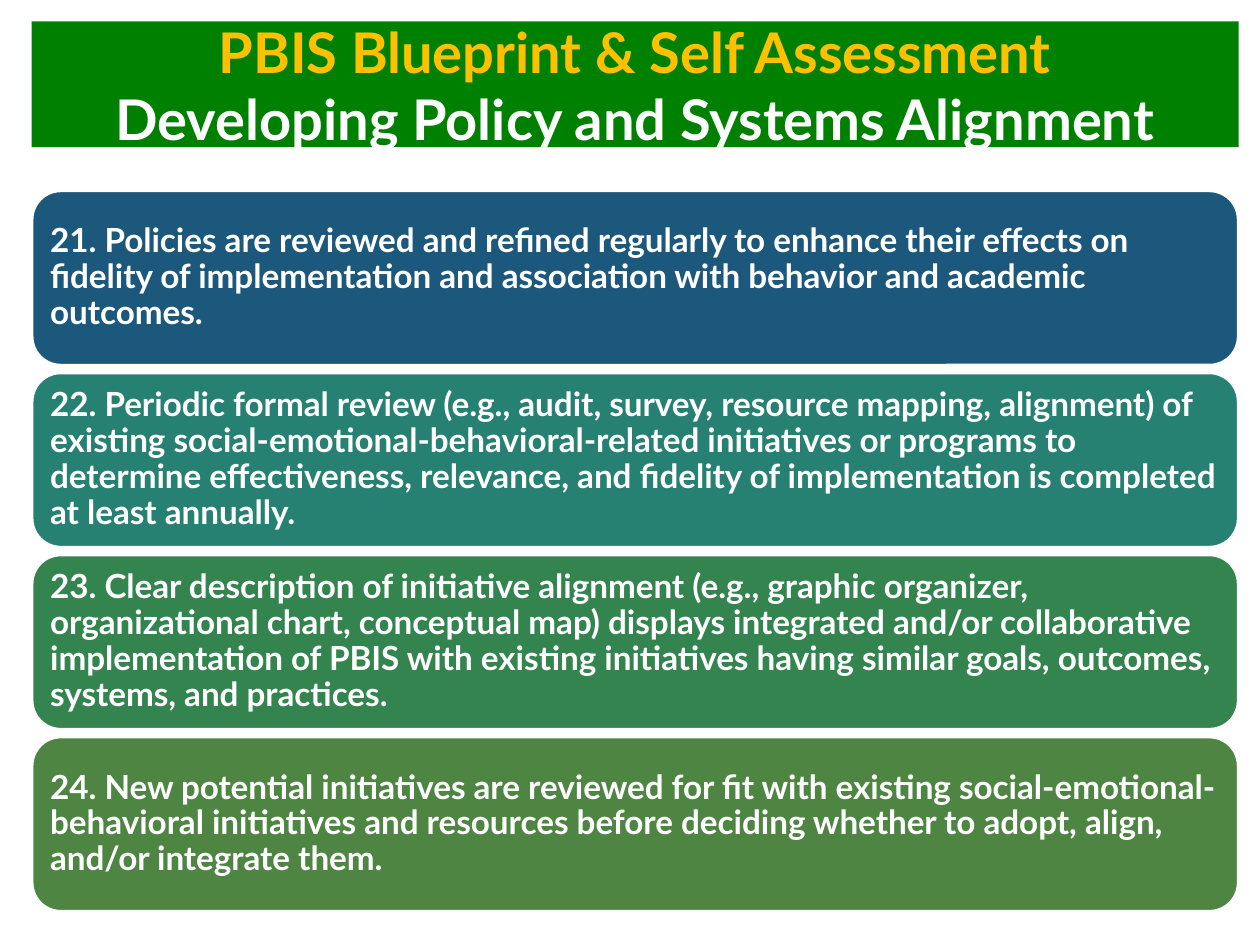
from dataclasses import dataclass

from pptx import Presentation
from pptx import util as u
from pptx.dml.color import RGBColor
from pptx.enum import shapes, text

COLORS = {
    "white": "FFFFFF",
    "gold": "FFC000",
    "banner": "008000",
    "blue": "1B587C",
    "teal": "268173",
    "green": "33844E",
    "olive": "4E8542",
}
FONT = "Lato"
LEFT, WIDTH = u.Cm(0.64), u.Cm(24.33)
CARD_TOP, CARD_HEIGHT, CARD_PITCH = u.Cm(3.84), u.Cm(3.53), u.Cm(3.67)


@dataclass
class Card:
    color: str
    wording: str


CARDS = [
    Card("blue", "21. Policies are reviewed and refined regularly to enhance their "
         "effects on fidelity of implementation and association with behavior and "
         "academic outcomes."),
    Card("teal", "22. Periodic formal review (e.g., audit, survey, resource mapping, "
         "alignment) of existing social-emotional-behavioral-related initiatives or "
         "programs to determine effectiveness, relevance, and fidelity of "
         "implementation is completed at least annually."),
    Card("green", "23. Clear description of initiative alignment (e.g., graphic "
         "organizer, organizational chart, conceptual map) displays integrated and/or "
         "collaborative implementation of PBIS with existing initiatives having "
         "similar goals, outcomes, systems, and practices."),
    Card("olive", "24. New potential initiatives are reviewed for fit with existing "
         "social-emotional-behavioral initiatives and resources before deciding "
         "whether to adopt, align, and/or integrate them."),
]


def rgb(name: str) -> RGBColor:
    return RGBColor.from_string(COLORS[name])


def add_panel(page, kind, top: int, height: int, color: str):
    """Add a full-width filled shape with vertically centred text."""
    box = page.shapes.add_shape(kind, LEFT, top, WIDTH, height)
    box.shadow.inherit = False
    box.fill.solid()
    box.fill.fore_color.rgb = rgb(color)
    box.line.fill.background()
    box.text_frame.word_wrap = True
    box.text_frame.vertical_anchor = text.MSO_ANCHOR.MIDDLE
    return box


def write(para, wording: str, *, size: float, color: str = "white",
          align=text.PP_ALIGN.LEFT, spacing: float = 1.0) -> None:
    para.alignment = align
    para.line_spacing = spacing
    span = para.add_run()
    span.text = wording
    span.font.name = FONT
    span.font.size = u.Pt(size)
    span.font.bold = True
    span.font.color.rgb = rgb(color)


def add_banner(page) -> None:
    box = add_panel(page, shapes.MSO_SHAPE.RECTANGLE, u.Cm(0.43), u.Cm(2.54), "banner")
    frame = box.text_frame
    center = text.PP_ALIGN.CENTER
    write(frame.paragraphs[0], "PBIS Blueprint & Self Assessment",
          size=32, color="gold", align=center)
    write(frame.add_paragraph(), "Developing Policy and Systems Alignment",
          size=32, align=center)


def add_card(page, card: Card, top: int) -> None:
    box = add_panel(page, shapes.MSO_SHAPE.ROUNDED_RECTANGLE, top, CARD_HEIGHT, card.color)
    box.line.color.rgb = rgb("white")
    box.line.width = u.Pt(2)
    frame = box.text_frame
    frame.margin_left = frame.margin_right = u.Cm(0.2)
    frame.margin_top = frame.margin_bottom = u.Cm(0.2)
    write(frame.paragraphs[0], card.wording, size=19, spacing=0.9)


def main() -> None:
    deck = Presentation()
    deck.slide_width, deck.slide_height = u.Cm(25.4), u.Cm(19.05)
    page = deck.slides.add_slide(deck.slide_layouts[6])

    # Title banner
    add_banner(page)

    # Stack of numbered items
    for row, card in enumerate(CARDS):
        add_card(page, card, CARD_TOP + row * CARD_PITCH)

    deck.save("out.pptx")


if __name__ == "__main__":
    main()
